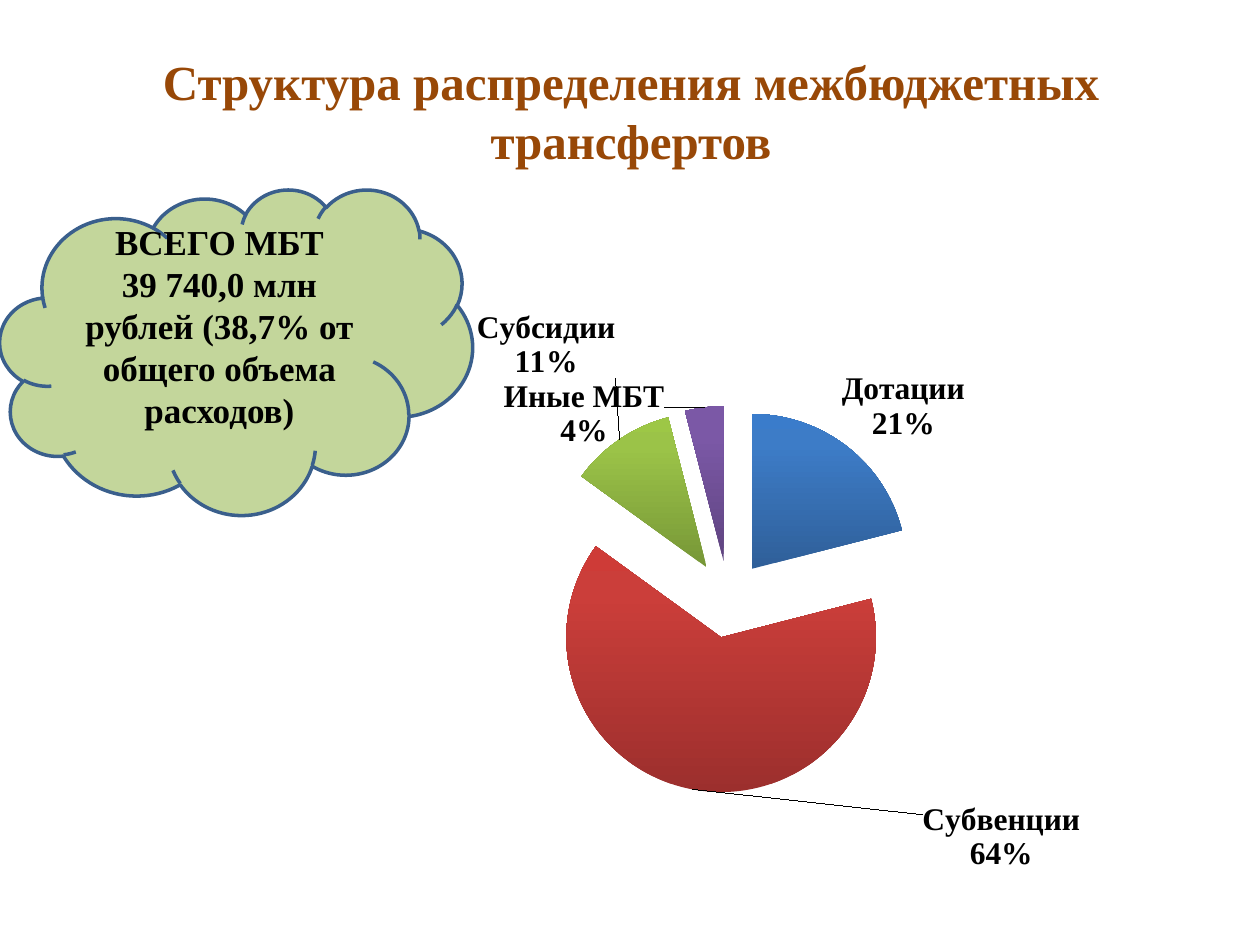
from copy import deepcopy
from dataclasses import dataclass

from pptx import Presentation
from pptx.chart.data import CategoryChartData
from pptx.dml.color import RGBColor as RGB
from pptx.enum.chart import XL_CHART_TYPE as ChartType
from pptx.enum.shapes import MSO_SHAPE as Shape
from pptx.enum.text import MSO_ANCHOR as Anchor, PP_ALIGN as Align
from pptx.oxml import parse_xml
from pptx.oxml.ns import nsdecls, qn
from pptx.util import Pt


@dataclass(frozen=True)
class Theme:
    font: str = "Times New Roman"
    chart_font: str = "Calibri"
    heading: str = "984807"
    ink: str = "000000"
    cloud: str = "C3D69B"
    cloud_edge: str = "3A5F8C"
    heading_size: int = 28
    cloud_size: int = 20
    label_size: int = 18


THEME = Theme()
HEADING = "Структура распределения межбюджетных трансфертов"
TOTAL = ["ВСЕГО МБТ", "39 740,0 млн рублей (38,7% от общего объема расходов)"]
TRANSFERS = [
    ("Дотации", 0.21, ("2F5F99", "3D7CC7", "3A7CCB"), (-0.01, 0)),
    ("Субвенции", 0.64, ("9C2F2D", "CB3E3A", "CE3B37"), (0.4, 0.03)),
    ("Субсидии", 0.11, ("779737", "9BC348", "9DC746"), (0, -0.09)),
    ("Иные МБТ", 0.04, ("5F4480", "7B58A6", "7C57A8"), (-0.04, 0.08)),
]
STOPS = (0, 0.8, 1)
EXPLOSION = 25
PIE_AREA = {"x": 0.28, "y": 0.23, "w": 0.44, "h": 0.64}

HEADING_BOX = (36.5, 18, 648, 90)
CHART_BOX = (138, 152.5, 556.5, 345.5)
CLOUD_BOX = (0, 108, 270, 186)


def points(box):
    return [Pt(length) for length in box]


def write(frame, lines, size, color):
    frame.word_wrap = True
    frame.vertical_anchor = Anchor.MIDDLE
    frame.text = "\n".join(lines)
    for paragraph in frame.paragraphs:
        paragraph.alignment = Align.CENTER
        font = paragraph.font
        font.name, font.size, font.bold = THEME.font, Pt(size), True
        font.color.rgb = RGB.from_string(color)


def shade(fill, colors):
    fill.gradient()
    fill.gradient_angle = 90
    first = fill.gradient_stops[0]
    stop_list = fill._fill._gradFill.gsLst
    stop_list.insert(1, deepcopy(stop_list[0]))
    for stop, position, color in zip(fill.gradient_stops, STOPS, colors):
        stop.position = position
        stop.color.rgb = RGB.from_string(color)


def label_settings():
    flags = {"LegendKey": 0, "Val": 1, "CatName": 1, "SerName": 0, "Percent": 0, "BubbleSize": 0}
    shows = "".join(f'<c:show{name} val="{on}"/>' for name, on in flags.items())
    return (
        '<c:numFmt formatCode="0%" sourceLinked="0"/><c:spPr><a:noFill/></c:spPr>'
        f'<c:txPr><a:bodyPr/><a:p><a:pPr><a:defRPr sz="{THEME.label_size * 100}" b="1">'
        f'<a:solidFill><a:srgbClr val="{THEME.ink}"/></a:solidFill>'
        f'<a:latin typeface="{THEME.font}"/></a:defRPr></a:pPr><a:endParaRPr/></a:p></c:txPr>'
        f'<c:dLblPos val="outEnd"/>{shows}<c:separator>\n</c:separator>'
    )


def pie_labels():
    settings = label_settings()
    moved = "".join(
        f'<c:dLbl><c:idx val="{index}"/><c:layout><c:manualLayout>'
        f'<c:x val="{dx}"/><c:y val="{dy}"/></c:manualLayout></c:layout>{settings}</c:dLbl>'
        for index, (_, _, _, (dx, dy)) in enumerate(TRANSFERS)
    )
    return parse_xml(
        f'<c:dLbls {nsdecls("c", "a")}>{moved}{settings}<c:showLeaderLines val="1"/></c:dLbls>'
    )


def pie_layout():
    sizes = "".join(f'<c:{side} val="{share}"/>' for side, share in PIE_AREA.items())
    return parse_xml(
        f'<c:layout {nsdecls("c")}><c:manualLayout><c:layoutTarget val="inner"/>'
        f'<c:xMode val="edge"/><c:yMode val="edge"/>{sizes}</c:manualLayout></c:layout>'
    )


def add_pie(slide):
    shares = CategoryChartData(number_format="0%")
    shares.categories = [name for name, *_ in TRANSFERS]
    shares.add_series("Series 1", [share for _, share, *_ in TRANSFERS])
    chart = slide.shapes.add_chart(ChartType.PIE, *points(CHART_BOX), shares).chart
    chart.has_title = chart.has_legend = False
    chart.font.name, chart.font.size = THEME.chart_font, Pt(THEME.label_size)
    chart.font.color.rgb = RGB.from_string(THEME.ink)

    plot = chart.plots[0]
    plot.vary_by_categories = True
    transfers = plot.series[0]
    for index, (_, _, colors, _) in enumerate(TRANSFERS):
        slice_format = transfers.points[index].format
        shade(slice_format.fill, colors)
        slice_format.line.fill.background()

    series_xml = transfers._element
    series_xml.find(qn("c:dPt")).addprevious(
        parse_xml(f'<c:explosion {nsdecls("c")} val="{EXPLOSION}"/>')
    )
    series_xml.find(qn("c:cat")).addprevious(pie_labels())

    area = chart._chartSpace.chart.plotArea
    for layout in area.findall(qn("c:layout")):
        area.remove(layout)
    area.insert(0, pie_layout())


def add_cloud(slide):
    cloud = slide.shapes.add_shape(Shape.CLOUD, *points(CLOUD_BOX))
    cloud.shadow.inherit = False
    cloud.fill.solid()
    cloud.fill.fore_color.rgb = RGB.from_string(THEME.cloud)
    cloud.line.color.rgb = RGB.from_string(THEME.cloud_edge)
    cloud.line.width = Pt(2)
    write(cloud.text_frame, TOTAL, THEME.cloud_size, THEME.ink)
    cloud.text_frame.margin_bottom = Pt(25)


def main():
    deck = Presentation()
    deck.slide_width, deck.slide_height = Pt(720), Pt(540)
    slide = deck.slides.add_slide(deck.slide_layouts[5])
    heading = slide.shapes.title
    heading.left, heading.top, heading.width, heading.height = points(HEADING_BOX)
    write(heading.text_frame, [HEADING], THEME.heading_size, THEME.heading)
    add_pie(slide)
    add_cloud(slide)
    deck.save("out.pptx")


if __name__ == "__main__":
    main()
